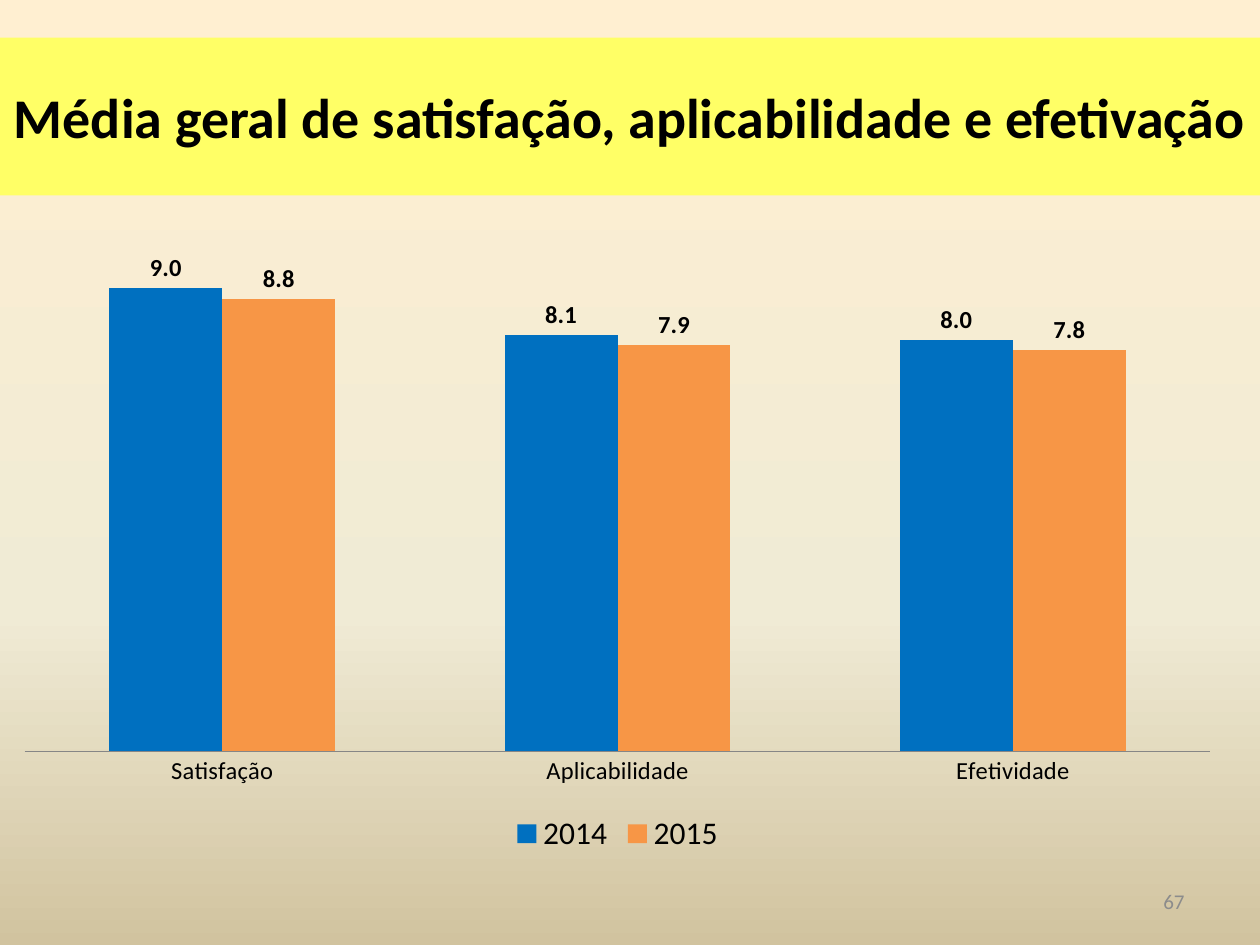
from lxml import etree
from pptx import Presentation
from pptx import util as u
from pptx.chart.data import CategoryChartData
from pptx.dml.color import RGBColor
from pptx.enum import chart as ch, text
from pptx.oxml.ns import qn

FONT = "Calibri"
COLORS = {"title": "000000", "band": "FFFF66", "number": "8C8C8C", "axis": "868686",
          "2014": "0070C0", "2015": "F79646"}
BACKGROUND = [(0, "FFEFD1"), (65, "F0EBD5"), (100, "D1C39F")]
TITLE = "Média geral de satisfação, aplicabilidade e efetivação"
PAGE_NUMBER = "67"
CATEGORIES = ["Satisfação", "Aplicabilidade", "Efetividade"]
SCORES = {"2014": (9, 8.1, 8), "2015": (8.8, 7.9, 7.8)}
PLACES = {"title": (0, 0.76, 25.4, 3.18), "chart": (0, 4.52, 24.9, 12.8),
          "number": (18.2, 17.65, 5.93, 1.02)}


def place(name):
    return [u.Cm(length) for length in PLACES[name]]


def rgb(name):
    return RGBColor.from_string(COLORS[name])


def set_all(target, **values):
    for name, value in values.items():
        setattr(target, name, value)


def set_font(font, size, color="title", bold=False):
    set_all(font, name=FONT, size=u.Pt(size), bold=bold)
    font.color.rgb = rgb(color)


def paint_background(page):
    fill = page.background.fill
    fill.gradient()
    fill.gradient_angle = 270
    stops = page._element.find(".//" + qn("a:gsLst"))
    stops.clear()
    for percent, color in BACKGROUND:
        stop = etree.SubElement(stops, qn("a:gs"), pos=str(percent * 1000))
        etree.SubElement(stop, qn("a:srgbClr"), val=color)


def write(box, words, align, size, color, bold=False):
    frame = box.text_frame
    set_all(frame, text=words, word_wrap=True, vertical_anchor=text.MSO_ANCHOR.MIDDLE,
            auto_size=text.MSO_AUTO_SIZE.NONE)
    para = frame.paragraphs[0]
    para.alignment = align
    set_font(para.runs[0].font, size, color, bold)


def add_score_chart(page):
    data = CategoryChartData(number_format="0.0")
    data.categories = CATEGORIES
    for year, scores in SCORES.items():
        data.add_series(year, scores)
    chart = page.shapes.add_chart(ch.XL_CHART_TYPE.COLUMN_CLUSTERED, *place("chart"), data).chart
    set_all(chart, has_title=False, has_legend=True)
    set_font(chart.font, 18)
    set_all(chart.legend, position=ch.XL_LEGEND_POSITION.BOTTOM, include_in_layout=False)

    set_all(chart.value_axis, visible=False, has_major_gridlines=False,
            minimum_scale=0.01, maximum_scale=10)
    axis = chart.category_axis
    axis.major_tick_mark = ch.XL_TICK_MARK.NONE
    axis.format.line.color.rgb = rgb("axis")
    set_font(axis.tick_labels.font, 14)

    plot = chart.plots[0]
    set_all(plot, gap_width=150, overlap=0, vary_by_categories=False)
    for series in plot.series:
        series.format.fill.solid()
        series.format.fill.fore_color.rgb = rgb(series.name)
        labels = series.data_labels
        set_all(labels, show_value=True, number_format="0.0", number_format_is_linked=False,
                position=ch.XL_LABEL_POSITION.OUTSIDE_END)
        set_font(labels.font, 14, bold=True)


def main():
    deck = Presentation()
    set_all(deck, slide_width=u.Cm(25.4), slide_height=u.Cm(19.05))
    page = deck.slides.add_slide(deck.slide_layouts[5])
    paint_background(page)

    title = page.shapes.title
    set_all(title, **dict(zip(("left", "top", "width", "height"), place("title"))))
    title.fill.solid()
    title.fill.fore_color.rgb = rgb("band")
    write(title, TITLE, text.PP_ALIGN.CENTER, 32, "title", bold=True)

    add_score_chart(page)
    number = page.shapes.add_textbox(*place("number"))
    write(number, PAGE_NUMBER, text.PP_ALIGN.RIGHT, 12, "number")
    deck.save("out.pptx")


if __name__ == "__main__":
    main()
